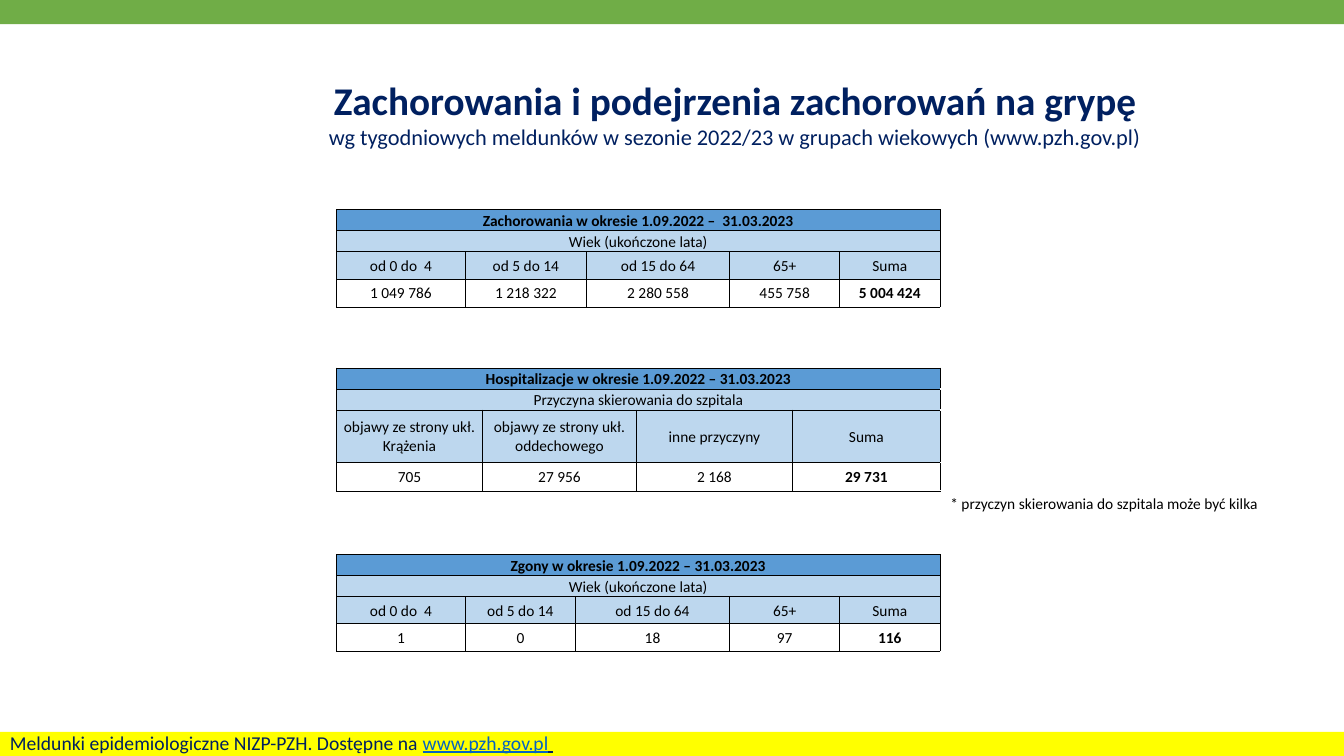
from dataclasses import dataclass

from lxml import etree
from pptx import Presentation
from pptx.dml.color import RGBColor
from pptx.enum.shapes import MSO_SHAPE
from pptx.enum.text import MSO_ANCHOR, PP_ALIGN
from pptx.oxml.ns import qn
from pptx.util import Cm, Pt

RECT = MSO_SHAPE.RECTANGLE
TOP, MIDDLE, BOTTOM = MSO_ANCHOR.TOP, MSO_ANCHOR.MIDDLE, MSO_ANCHOR.BOTTOM
LEFT, CENTER = PP_ALIGN.LEFT, PP_ALIGN.CENTER


@dataclass(frozen=True)
class Theme:
    font: str = "Calibri"
    navy: str = "002060"
    black: str = "000000"
    link: str = "0563C1"
    green: str = "70AD47"
    yellow: str = "FFFF00"
    header: str = "5B9BD5"
    label: str = "BDD7EE"
    title_size: int = 28
    subtitle_size: int = 16
    footer_size: int = 14
    body_size: int = 11
    border: float = 0.5


class SlideBuilder:
    def __init__(self, prs, theme):
        self.theme = theme
        self.slide = prs.slides.add_slide(prs.slide_layouts[6])

    def set_font(self, p, size, color, bold=False):
        p.font.name = self.theme.font
        p.font.size = Pt(size)
        p.font.bold = bold
        p.font.color.rgb = RGBColor.from_string(color)

    def bar(self, top, width, height, color):
        sp = self.slide.shapes.add_shape(RECT, 0, Cm(top), width, Cm(height))
        sp.shadow.inherit = False
        sp.fill.solid()
        sp.fill.fore_color.rgb = RGBColor.from_string(color)
        sp.line.fill.background()

    def text(self, box, lines, align=LEFT, anchor=TOP):
        tf = self.slide.shapes.add_textbox(*map(Cm, box)).text_frame
        tf.word_wrap = True
        tf.vertical_anchor = anchor
        for i, (text, size, color, bold) in enumerate(lines):
            p = tf.add_paragraph() if i else tf.paragraphs[0]
            p.alignment = align
            p.add_run().text = text
            self.set_font(p, size, color, bold)
        return tf.paragraphs[0]

    def border(self, cell, sides):
        tc_pr = cell._tc.get_or_add_tcPr()
        for i, side in enumerate(sides):
            ln = etree.Element(qn(f"a:{side}"), w=str(Pt(self.theme.border)))
            fill = etree.SubElement(ln, qn("a:solidFill"))
            etree.SubElement(fill, qn("a:srgbClr"), val=self.theme.black)
            tc_pr.insert(i, ln)

    def cell(self, cell, text, fill, bold, anchor):
        cell.margin_left = cell.margin_right = cell.margin_top = Cm(0.03)
        cell.margin_bottom = 0
        cell.vertical_anchor = anchor
        p = cell.text_frame.paragraphs[0]
        p.alignment = CENTER
        if text:
            p.add_run().text = text
        self.set_font(p, self.theme.body_size, self.theme.black, bold)
        if fill:
            cell.fill.solid()
            cell.fill.fore_color.rgb = RGBColor.from_string(fill)
        else:
            cell.fill.background()

    def table(self, top, widths, heights, headings, labels, values,
              heading_anchor=BOTTOM):
        n = len(labels)
        frame = self.slide.shapes.add_table(
            len(heights), len(widths), Cm(8.48), Cm(top),
            Cm(sum(widths)), Cm(sum(heights)))
        table = frame.table
        table.first_row = table.horz_banding = False
        for column, width in zip(table.columns, widths):
            column.width = Cm(width)
        for row, height in zip(table.rows, heights):
            row.height = Cm(height)
        fills = [self.theme.header, self.theme.label, self.theme.label, None]
        rows = [[text] + [""] * (n - 1) for text in headings] + [labels, values]
        for r, (texts, fill) in enumerate(zip(rows, fills)):
            is_heading = r < len(headings)
            for c in range(len(widths)):
                cell = table.cell(r, c)
                inside = c < n
                bold = r == 0 or (r == 3 and c == n - 1)
                self.cell(cell, texts[c] if inside else "",
                          fill if inside else None, bold,
                          heading_anchor if is_heading else MIDDLE)
                sides = ("lnL", "lnR", "lnT", "lnB") if inside else ("lnL",)
                self.border(cell, sides)
            if is_heading:
                table.cell(r, 0).merge(table.cell(r, n - 1))


def main():
    prs = Presentation()
    prs.slide_width, prs.slide_height = Cm(33.87), Cm(19.05)
    theme = Theme()
    s = SlideBuilder(prs, theme)

    s.bar(0, prs.slide_width, 0.61, theme.green)
    s.bar(18.44, prs.slide_width, 0.61, theme.yellow)
    s.text((5.49, 1.02, 26.06, 3.68), [
        ("Zachorowania i podejrzenia zachorowań na grypę",
         theme.title_size, theme.navy, True),
        ("wg tygodniowych meldunków w sezonie 2022/23 w grupach wiekowych (www.pzh.gov.pl)",
         theme.subtitle_size, theme.navy, False),
    ], CENTER, MIDDLE)

    ages = ["od 0 do  4", "od 5 do 14", "od 15 do 64", "65+", "Suma"]
    age_heading = "Wiek (ukończone lata)"
    s.table(5.28, [3.25, 3.05, 3.61, 2.77, 2.53], [0.53, 0.53, 0.69, 0.71],
            ["Zachorowania w okresie 1.09.2022 –  31.03.2023", age_heading],
            ages,
            ["1 049 786", "1 218 322", "2 280 558", "455 758", "5 004 424"])
    s.table(9.27, [3.68, 3.88, 3.93, 3.73, 0.64], [0.53, 0.53, 1.33, 0.71],
            ["Hospitalizacje w okresie 1.09.2022 – 31.03.2023",
             "Przyczyna skierowania do szpitala"],
            ["objawy ze strony ukł. Krążenia",
             "objawy ze strony ukł. oddechowego", "inne przyczyny", "Suma"],
            ["705", "27 956", "2 168", "29 731"], MIDDLE)
    s.table(13.97, [3.25, 2.77, 3.89, 2.77, 2.53], [0.53, 0.53, 0.69, 0.69],
            ["Zgony w okresie 1.09.2022 – 31.03.2023", age_heading],
            ages, ["1", "0", "18", "97", "116"])

    s.text((23.7, 12.32, 9.02, 0.74), [
        ("* przyczyn skierowania do szpitala może być kilka",
         theme.body_size, theme.black, False)])
    p = s.text((0, 18.29, 19.61, 0.86), [
        ("Meldunki epidemiologiczne NIZP-PZH. Dostępne na ",
         theme.footer_size, theme.navy, False)])
    for text, color in (("www.pzh.gov.pl", theme.link), (" ", theme.navy)):
        r = p.add_run()
        r.text = text
        r.font.underline = True
        r.font.color.rgb = RGBColor.from_string(color)

    prs.save("out.pptx")


if __name__ == "__main__":
    main()
